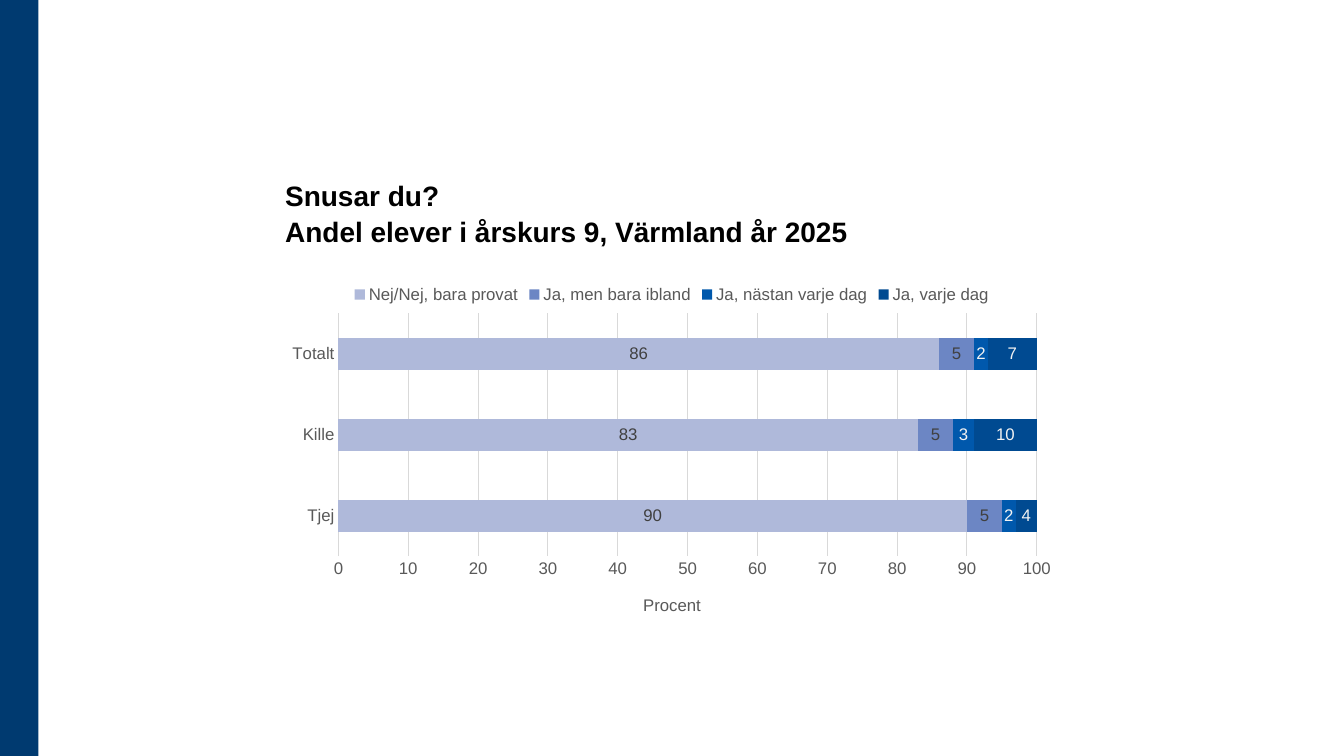
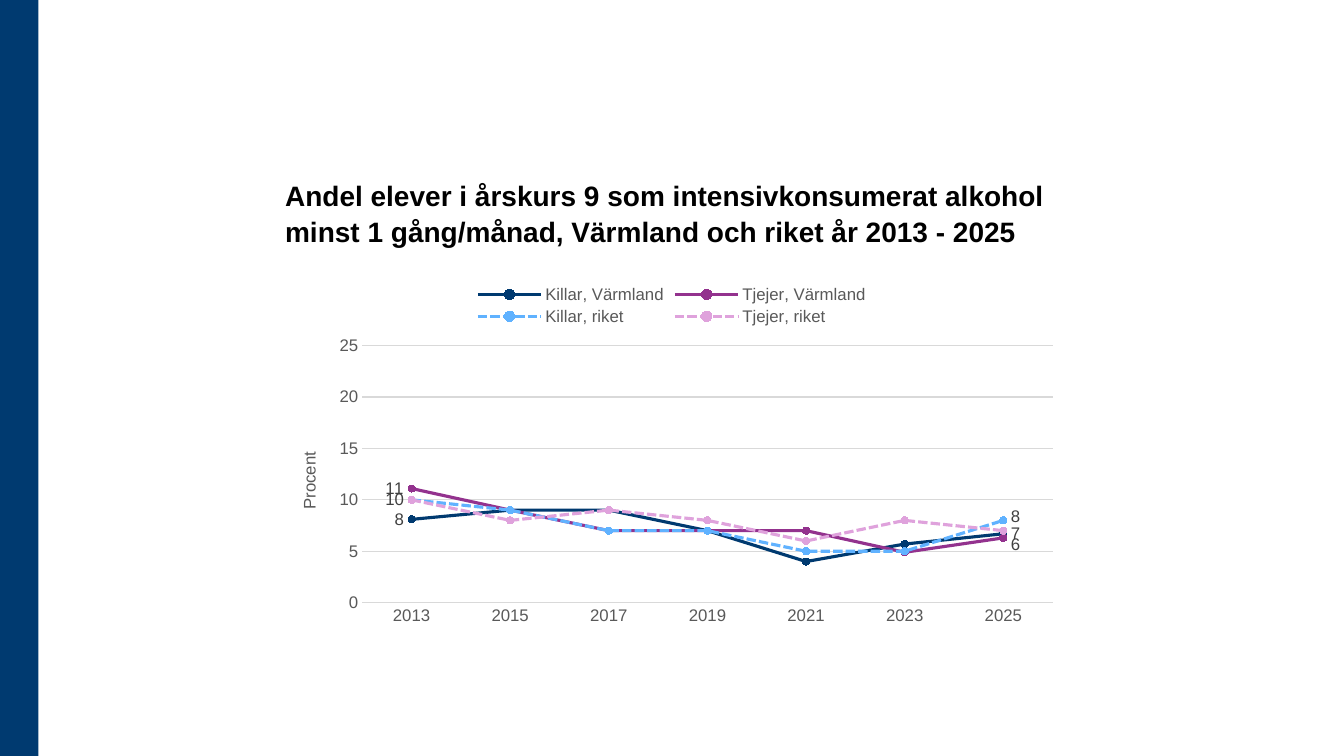
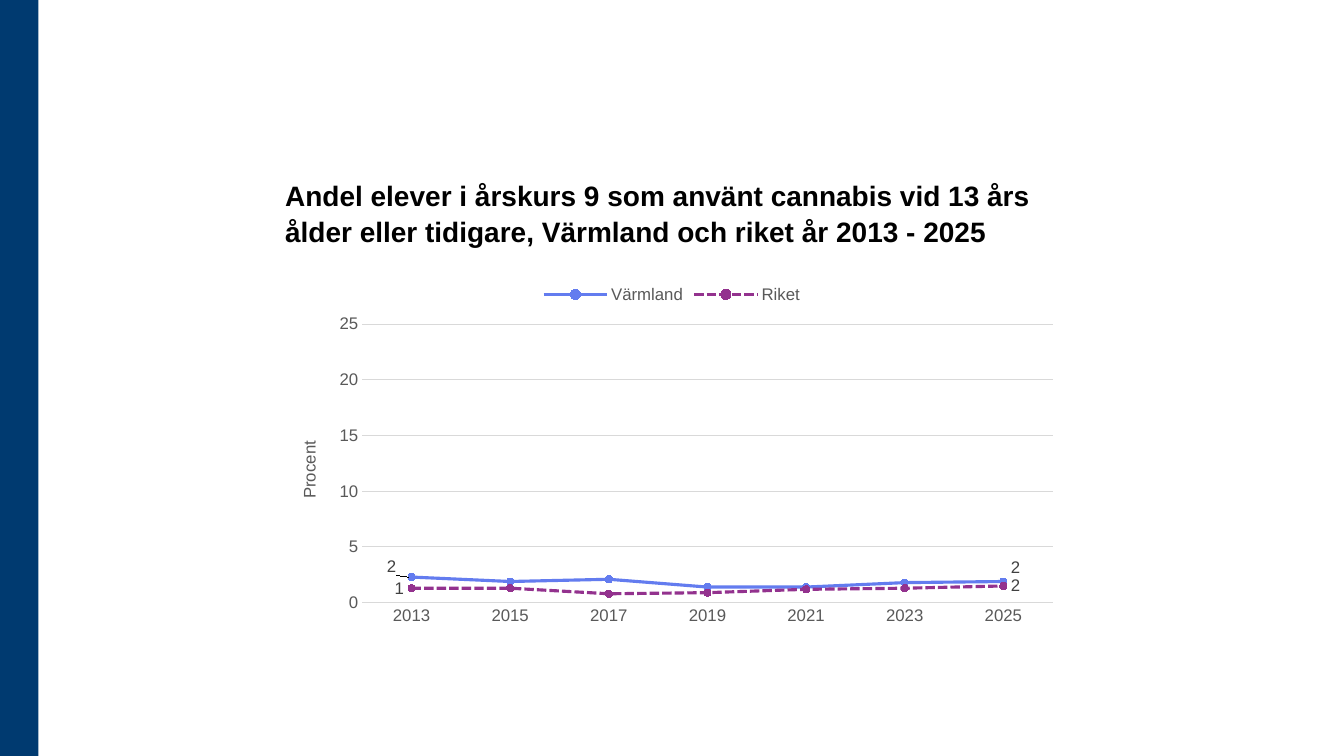
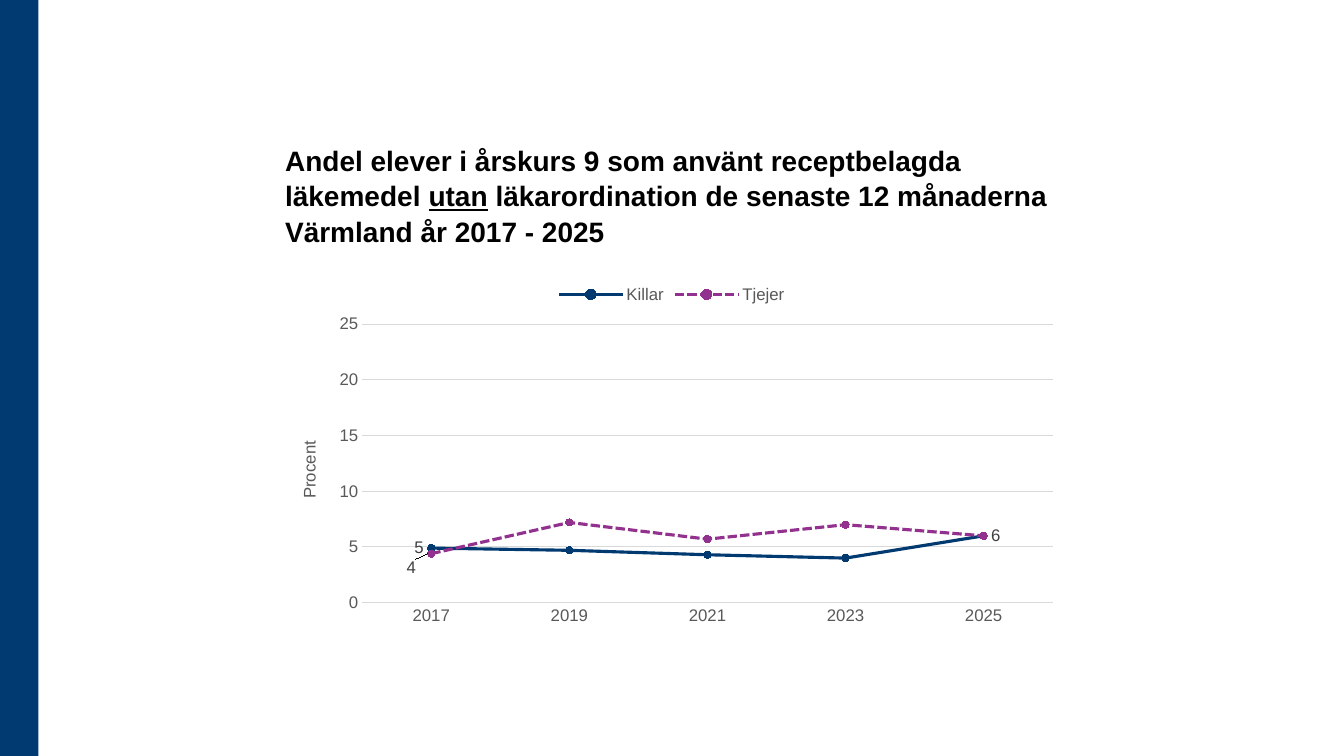
from dataclasses import dataclass

from lxml import etree
from pptx import Presentation
from pptx import util as u
from pptx.chart.data import CategoryChartData
from pptx.dml.color import RGBColor
from pptx.enum import chart as ec
from pptx.enum import dml, shapes, text
from pptx.oxml.ns import qn


@dataclass(frozen=True)
class Theme:
    font: str = "Arial"
    title_size: int = 20
    chart_size: int = 12
    title: str = "000000"
    axis: str = "595959"
    label: str = "404040"
    label_light: str = "F2F2F2"
    grid: str = "D9D9D9"
    navy: str = "003A70"
    purple: str = "93328E"
    sky: str = "60B2FF"
    pink: str = "DFA2DC"
    violet: str = "637CEF"
    bars: tuple = ("AFB9DA", "6C86C4", "0058AC", "004A91")


@dataclass(frozen=True)
class Box:
    left: float
    top: float
    width: float
    height: float

    def lengths(self):
        return [u.Cm(v) for v in (self.left, self.top, self.width, self.height)]


@dataclass(frozen=True)
class Line:
    name: str
    values: tuple
    color: str
    dashed: bool = False
    first: tuple | None = (0, 0)  # label offset at the first point, None for no label
    last: tuple | None = (0, 0)   # label offset at the last point


THEME = Theme()
PAGE = Box(0, 0, 33.87, 19.05)
BAND = Box(0, 0, 0.97, PAGE.height)
TITLE = Box(6.93, 2.69, 20, 3.68)
CHART = Box(TITLE.left, 6.91, TITLE.width, 9)
YEARS = ("2013", "2015", "2017", "2019", "2021", "2023", "2025")


# Shared helpers
def style_font(font, size, color, bold=False):
    font.name = THEME.font
    font.size = u.Pt(size)
    font.bold = bold
    font.color.rgb = RGBColor.from_string(color)


def paint(fill, color):
    fill.solid()
    fill.fore_color.rgb = RGBColor.from_string(color)


def set_layout(parent, index, edge=True, inner=False, **fractions):
    """Give a chart part a manual place, in fractions of the chart."""
    for old in parent.findall(qn("c:layout")):
        parent.remove(old)
    layout = etree.Element(qn("c:layout"))
    manual = etree.SubElement(layout, qn("c:manualLayout"))
    entries = [("layoutTarget", "inner")] if inner else []
    if edge:
        entries += [("xMode", "edge"), ("yMode", "edge")]
    for tag, value in entries + list(fractions.items()):
        etree.SubElement(manual, qn(f"c:{tag}")).set("val", str(value))
    parent.insert(index, layout)


def add_band(deck, page):
    """Draw the side band once and move it to the slide master."""
    band = page.shapes.add_shape(shapes.MSO_SHAPE.RECTANGLE, *BAND.lengths())
    band.shadow.inherit = False
    paint(band.fill, THEME.navy)
    band.line.fill.background()
    deck.slide_master.shapes.element.insert(2, band.element)


def add_title(page, box, parts):
    """Fill the title; a second part is underlined."""
    title = page.shapes.title
    title.left, title.top, title.width, title.height = box.lengths()
    frame = title.text_frame
    frame.word_wrap = True
    frame.auto_size = text.MSO_AUTO_SIZE.NONE
    frame.vertical_anchor = text.MSO_ANCHOR.BOTTOM
    para = frame.paragraphs[0]
    para.text = parts[0]
    for part in parts[1:]:
        para.add_run().text = part
    para.alignment = text.PP_ALIGN.LEFT
    para.line_spacing = 1.05
    for span in para.runs:
        style_font(span.font, THEME.title_size, THEME.title, bold=True)
    if len(parts) > 1:
        para.runs[1].font.underline = True


# Charts
def add_chart(page, box, kind, categories, series, maximum, step, title_turn):
    data = CategoryChartData(number_format="0")
    data.categories = categories
    for name, values in series:
        data.add_series(name, values)
    chart = page.shapes.add_chart(kind, *box.lengths(), data).chart
    chart.has_title = False
    style_font(chart.font, THEME.chart_size, THEME.axis)

    # Legend
    chart.has_legend = True
    chart.legend.position = ec.XL_LEGEND_POSITION.TOP
    chart.legend.include_in_layout = False
    style_font(chart.legend.font, THEME.chart_size, THEME.axis)

    # Axes
    for axis in (chart.category_axis, chart.value_axis):
        axis.major_tick_mark = axis.minor_tick_mark = ec.XL_TICK_MARK.NONE
        style_font(axis.tick_labels.font, THEME.chart_size, THEME.axis)
    value_axis = chart.value_axis
    value_axis.minimum_scale, value_axis.maximum_scale = 0, maximum
    value_axis.major_unit = step
    value_axis.tick_labels.number_format = "0"
    value_axis.tick_labels.number_format_is_linked = False
    value_axis.has_major_gridlines = True
    value_axis.format.line.fill.background()
    for line in (chart.category_axis.format.line, value_axis.major_gridlines.format.line):
        line.width = u.Pt(0.75)
        paint(line.fill, THEME.grid)

    # Axis title
    frame = value_axis.axis_title.text_frame
    frame.text = "Procent"
    style_font(frame.paragraphs[0].runs[0].font, THEME.chart_size, THEME.axis)
    frame._txBody.bodyPr.set("rot", str(title_turn * 60000))
    return chart


def place_plot(chart, **fractions):
    set_layout(chart.element.find(".//" + qn("c:plotArea")), 0, inner=True, **fractions)


def add_bar_chart(page, box, categories, series):
    chart = add_chart(page, box, ec.XL_CHART_TYPE.BAR_STACKED, categories, series, 100, 10, 0)
    plot = chart.plots[0]
    plot.gap_width, plot.overlap = 150, 100
    plot.vary_by_categories = False
    label_colors = (THEME.label, THEME.label, THEME.label_light, THEME.label_light)
    for bar, color, label_color in zip(plot.series, THEME.bars, label_colors):
        paint(bar.format.fill, color)
        labels = bar.data_labels
        labels.show_value = True
        labels.number_format = "0"
        labels.number_format_is_linked = False
        labels.position = ec.XL_LABEL_POSITION.CENTER
        style_font(labels.font, THEME.chart_size, label_color)
    place_plot(chart, x=0.08, y=0.11, w=0.88, h=0.68)
    set_layout(chart.value_axis.axis_title._element, 1, x=0.46, y=0.89)


def label_ends(series, line):
    """Label the first point on its left and the last on its right."""
    ends = ((0, line.first, ec.XL_LABEL_POSITION.LEFT),
            (len(line.values) - 1, line.last, ec.XL_LABEL_POSITION.RIGHT))
    offsets = []
    for index, offset, position in ends:
        if offset is not None:
            label = series.points[index].data_label
            style_font(label.font, THEME.chart_size, THEME.label)
            label.position = position
            offsets.append(offset)
    if offsets:
        series.data_labels.show_value = False
    for label, (dx, dy) in zip(series._element.findall(".//" + qn("c:dLbl")), offsets):
        number = etree.Element(qn("c:numFmt"), formatCode="0", sourceLinked="0")
        label.insert(1, number)
        if dx or dy:
            set_layout(label, 1, edge=False, x=dx, y=dy)


def add_line_chart(page, box, categories, lines, top=0.14):
    chart = add_chart(page, box, ec.XL_CHART_TYPE.LINE_MARKERS, categories,
                      [(line.name, line.values) for line in lines], 25, 5, -90)
    chart.plots[0].vary_by_categories = False
    for series, line in zip(chart.plots[0].series, lines):
        series.smooth = False
        series.format.line.width = u.Pt(2.25)
        paint(series.format.line.fill, line.color)
        if line.dashed:
            series.format.line.dash_style = dml.MSO_LINE.SQUARE_DOT
        marker = series.marker
        marker.style, marker.size = ec.XL_MARKER_STYLE.CIRCLE, 5
        paint(marker.format.fill, line.color)
        paint(marker.format.line.fill, line.color)
        label_ends(series, line)
    place_plot(chart, x=0.11, y=top, w=0.87, h=round(0.92 - top, 2))


# Slides
def add_page(deck, *title_parts):
    page = deck.slides.add_slide(deck.slide_layouts[5])
    add_title(page, TITLE, title_parts)
    return page


def add_snus_page(deck):
    page = add_page(deck, "Snusar du?\nAndel elever i årskurs 9, Värmland år 2025")
    add_bar_chart(page, CHART, ("Tjej", "Kille", "Totalt"), (
        ("Nej/Nej, bara provat", (90, 83, 86)),
        ("Ja, men bara ibland", (5, 5, 5)),
        ("Ja, nästan varje dag", (2, 3, 2)),
        ("Ja, varje dag", (4, 10, 7)),
    ))
    return page


def add_alcohol_page(deck):
    page = add_page(deck, "Andel elever i årskurs 9 som intensivkonsumerat alkohol "
                          "minst 1 gång/månad, Värmland och riket år 2013 - 2025")
    add_line_chart(page, CHART, YEARS, (
        Line("Killar, Värmland", (8.1, 9, 9, 7, 4, 5.7, 6.7), THEME.navy),
        Line("Tjejer, Värmland", (11.1, 9, 7, 7, 7, 4.9, 6.3), THEME.purple, last=(0, 0.02)),
        Line("Killar, riket", (10, 9, 7, 7, 5, 5, 8), THEME.sky, True, last=(0, -0.01)),
        Line("Tjejer, riket", (10, 8, 9, 8, 6, 8, 7), THEME.pink, True, None, None),
    ), top=0.2)


def add_cannabis_page(deck):
    page = add_page(deck, "Andel elever i årskurs 9 som använt cannabis vid 13 års "
                          "ålder eller tidigare, Värmland och riket år 2013 - 2025")
    add_line_chart(page, CHART, YEARS, (
        Line("Värmland", (2.3, 1.9, 2.1, 1.4, 1.4, 1.8, 1.9), THEME.violet,
             first=(-0.01, -0.03), last=(0, -0.04)),
        Line("Riket", (1.3, 1.3, 0.8, 0.9, 1.2, 1.3, 1.5), THEME.purple, True),
    ))


def add_medicine_page(deck):
    page = add_page(deck, "Andel elever i årskurs 9 som använt receptbelagda läkemedel ",
                    "utan",
                    " läkarordination de senaste 12 månaderna Värmland år 2017 - 2025")
    add_line_chart(page, CHART, YEARS[2:], (
        Line("Killar", (4.9, 4.7, 4.3, 4, 6), THEME.navy, last=None),
        Line("Tjejer", (4.4, 7.2, 5.7, 7, 6), THEME.purple, True, first=(-0.01, 0.04)),
    ))


def main():
    deck = Presentation()
    deck.slide_width, deck.slide_height = u.Cm(PAGE.width), u.Cm(PAGE.height)
    add_band(deck, add_snus_page(deck))
    add_alcohol_page(deck)
    add_cannabis_page(deck)
    add_medicine_page(deck)
    deck.save("out.pptx")


if __name__ == "__main__":
    main()
